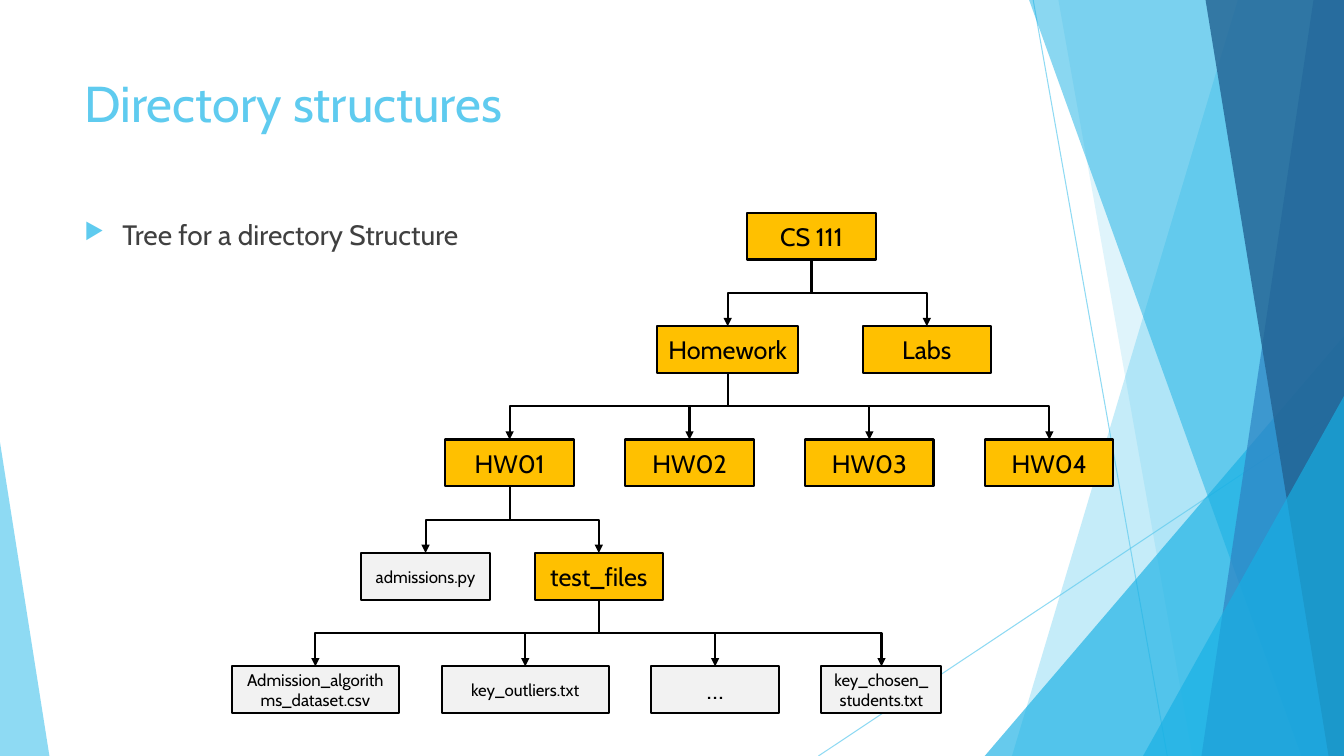
import pptx
import pptx.util
import pptx.dml.color
import pptx.enum.shapes
import pptx.enum.text
import pptx.oxml
import pptx.oxml.ns
from lxml import etree

Pt = pptx.util.Pt
SHAPE = pptx.enum.shapes.MSO_SHAPE
LINK = pptx.enum.shapes.MSO_CONNECTOR
ALIGN = pptx.enum.text.PP_ALIGN
ANCHOR = pptx.enum.text.MSO_ANCHOR

# Content: name, parent, row, centre x, width, kind
TITLE = "Directory structures"
BULLET = "Tree for a directory Structure"
NODES = [
    ("CS 111", None, 0, 579.6, 91.7, "folder"),
    ("Homework", "CS 111", 1, 519.8, 100.8, "folder"),
    ("Labs", "CS 111", 1, 662, 91.7, "folder"),
    *[(f"HW0{i + 1}", "Homework", 2, 364 + 128.5 * i, 91.7, "folder") for i in range(4)],
    ("admissions.py", "HW01", 3, 304, 91.7, "file"),
    ("test_files", "HW01", 3, 427.7, 91.7, "folder"),
    ("Admission_algorithms_dataset.csv", "test_files", 4, 225.3, 119.5, "file"),
    ("key_outliers.txt", "test_files", 4, 375.2, 119.5, "file"),
    ("…", "test_files", 4, 510.8, 91.7, "more"),
    ("key_chosen_students.txt", "test_files", 4, 629.6, 85.7, "file"),
]

# Background facets, back to front
HAIRLINES = [(738, 0, 833.8, 540), (960, 290.2, 584.6, 540)]
FACETS = [  # kind, geometry, colour, opacity %
    ("poly", [(884.2, 0), (960, 0), (960, 540), (722.9, 540)], "sky", 36),
    ("poly", [(756, 0), (960, 0), (960, 540), (851.8, 540)], "sky", 20),
    ("tri", (703.4, 240, 256.6, 300, 1), "cyan", 66),
    ("poly", [(735.1, 0), (960, 0), (960, 540), (929.5, 540)], "cyan", 50),
    ("poly", [(938.2, 0), (960, 0), (960, 540), (858.2, 540)], "blue", 70),
    ("poly", [(861.1, 0), (960, 0), (960, 540), (949, 540)], "navy", 80),
    ("tri", (816.5, 283, 143.5, 257, 1), "cyan", 66),
    ("tri", (0, 316, 35.3, 224, 0), "sky", 70),
]

THEME = {
    "font": "Cabin",
    "colour": {"sky": "5FCBEF", "cyan": "17B0E4", "blue": "2E83C3", "navy": "226292",
               "text": "404040", "ink": "000000",
               "folder": "FFC000", "file": "F2F2F2", "more": "F2F2F2"},
    "size": {"title": 36, "body": 20, "folder": 18, "file": 12, "more": 18},
    "line": 1.5, "hairline": 0.75,
}
ROW_TOP, ROW_PITCH, NODE_H = 152, 81, 33.4

prs = pptx.Presentation()
prs.slide_width, prs.slide_height = Pt(960), Pt(540)
s = prs.slides.add_slide(prs.slide_layouts[6])


def rgb(name):
    return pptx.dml.color.RGBColor.from_string(THEME["colour"][name])


def child(parent, tag, **attrs):
    return etree.SubElement(parent, pptx.oxml.ns.qn(tag), attrs)


def set_opacity(sp, percent):
    for clr in sp._element.spPr.iter(pptx.oxml.ns.qn("a:srgbClr")):
        child(clr, "a:alpha", val=str(percent * 1000))


def write(tf, text, size, colour):
    tf.word_wrap = True
    tf.text = text
    p = tf.paragraphs[0]
    font = p.runs[0].font
    font.name, font.size = THEME["font"], Pt(THEME["size"][size])
    font.color.rgb = rgb(colour)
    return p


def connector(kind, x1, y1, x2, y2, colour, width):
    c = s.shapes.add_connector(kind, Pt(x1), Pt(y1), Pt(x2), Pt(y2))
    c.line.color.rgb, c.line.width = rgb(colour), Pt(width)
    return c


def text_box(top, height, text, size, colour):
    tf = s.shapes.add_textbox(Pt(53.3), Pt(top), Pt(676.8), Pt(height)).text_frame
    return write(tf, text, size, colour)


def elbow(parent, node):
    c = connector(LINK.ELBOW, 0, 0, 1, 1, "ink", THEME["line"])
    c.begin_connect(parent, 2)
    c.end_connect(node, 0)
    # A vertical elbow is a horizontal one turned about its centre
    x1, y1 = parent.left + parent.width // 2, parent.top + parent.height
    x2, y2 = node.left + node.width // 2, node.top
    c.width, c.height = y2 - y1, abs(x2 - x1)
    c.left, c.top = (x1 + x2 - c.width) // 2, (y1 + y2 - c.height) // 2
    xfrm = c._element.spPr.find(pptx.oxml.ns.qn("a:xfrm"))
    right = x2 > x1
    xfrm.set("rot", str((270 if right else 90) * 60000))
    xfrm.set("flipH", "1" if right else "0")
    xfrm.set("flipV", "0")
    child(c.line._get_or_add_ln(), "a:tailEnd", type="triangle")
    child(c._element.spPr, "a:effectLst")


# Background
for ends in HAIRLINES:
    c = connector(LINK.STRAIGHT, *ends, "sky", THEME["hairline"])
    child(c._element.spPr, "a:effectLst")
    set_opacity(c, 70)
for kind, geometry, colour, opacity in FACETS:
    if kind == "poly":
        points = [(Pt(x), Pt(y)) for x, y in geometry]
        builder = s.shapes.build_freeform(*points[0])
        builder.add_line_segments(points[1:], close=True)
        sp = builder.convert_to_shape()
    else:
        *box, apex = geometry
        sp = s.shapes.add_shape(SHAPE.ISOSCELES_TRIANGLE, *map(Pt, box))
        sp.adjustments[0] = apex
    sp.shadow.inherit = False
    sp.fill.solid()
    sp.fill.fore_color.rgb = rgb(colour)
    sp.line.fill.background()
    set_opacity(sp, opacity)

# Title and bullet
text_box(48.2, 103.7, TITLE, "title", "sky")
p = text_box(152, 324, BULLET, "body", "text")
p.space_before = Pt(10)
pPr = p._p.get_or_add_pPr()
pPr.set("marL", str(Pt(27)))
pPr.set("indent", str(-Pt(27)))
child(child(pPr, "a:buClr"), "a:srgbClr", val=THEME["colour"]["sky"])
child(pPr, "a:buSzPct", val="80000")
child(pPr, "a:buChar", char="▶")

# Tree nodes
boxes = {}
for name, parent, row, centre, width, kind in NODES:
    sp = s.shapes.add_shape(SHAPE.RECTANGLE, Pt(centre - width / 2),
                            Pt(ROW_TOP + ROW_PITCH * row), Pt(width), Pt(NODE_H))
    sp.shadow.inherit = False
    sp.fill.solid()
    sp.fill.fore_color.rgb = rgb(kind)
    sp.line.color.rgb, sp.line.width = rgb("ink"), Pt(THEME["line"])
    sp.text_frame.vertical_anchor = ANCHOR.MIDDLE
    write(sp.text_frame, name, kind, "ink").alignment = ALIGN.CENTER
    boxes[name] = sp

# Tree branches
for name, parent, *_ in NODES:
    if parent:
        elbow(boxes[parent], boxes[name])

prs.save("out.pptx")
